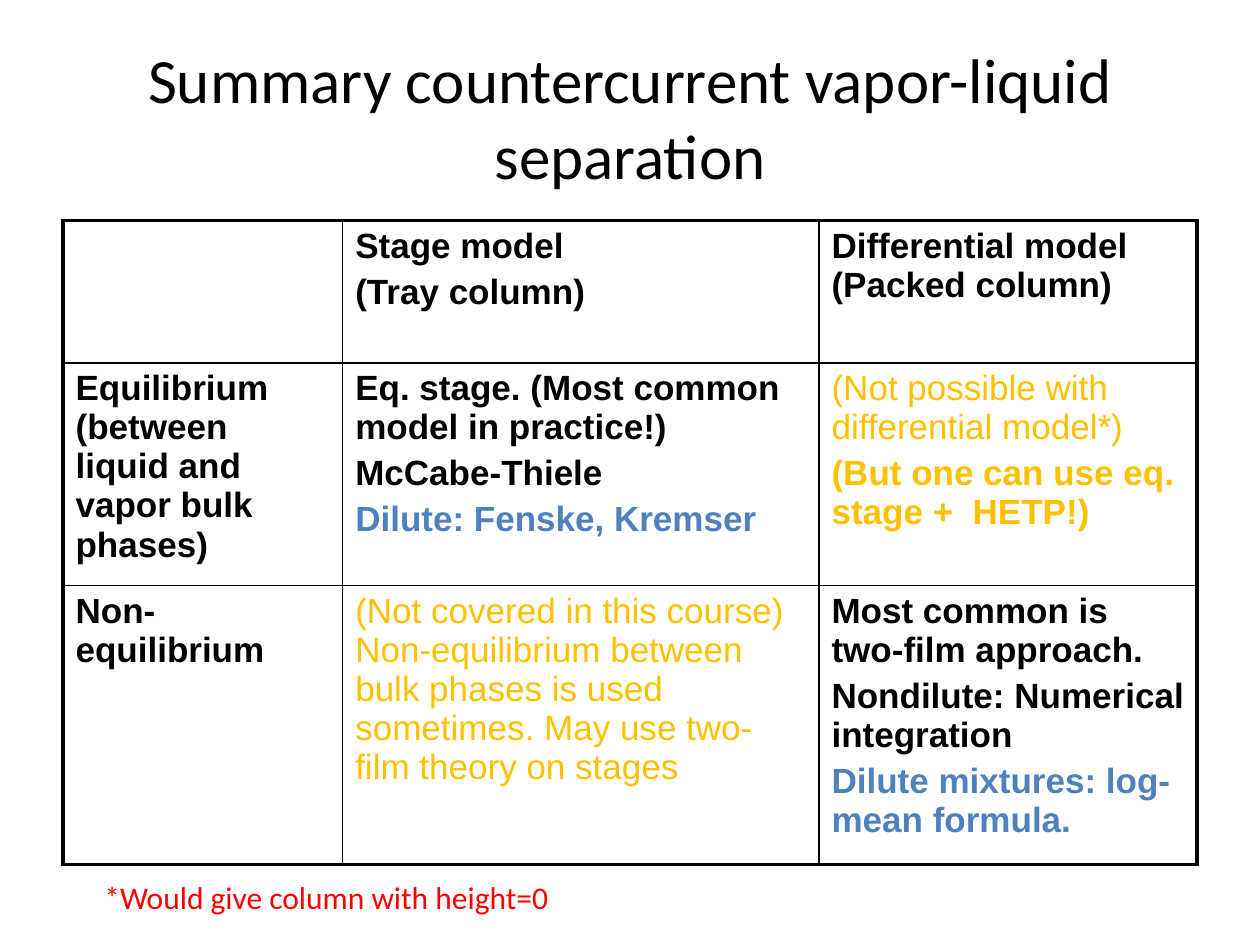
import pptx
import pptx.util
import pptx.dml.color
import pptx.enum.text
import pptx.oxml
import pptx.oxml.ns

Inches = pptx.util.Inches
Pt = pptx.util.Pt
COLORS = {"black": "000000", "blue": "4F81BD", "gold": "FFC000", "red": "FF0000"}


def add_run(p, text, size, font, color, bold=False):
    r = p.add_run()
    r.text = text
    r.font.size = Pt(size)
    r.font.name = font
    r.font.bold = bold
    r.font.color.rgb = pptx.dml.color.RGBColor.from_string(COLORS[color])


def add_border(cell, side, width):
    cell._tc.get_or_add_tcPr().append(pptx.oxml.parse_xml(
        f'<a:{side} {pptx.oxml.ns.nsdecls("a")} w="{Pt(width)}">'
        f'<a:solidFill><a:srgbClr val="{COLORS["black"]}"/></a:solidFill></a:{side}>'))


prs = pptx.Presentation()
prs.slide_width = Inches(10)
prs.slide_height = Inches(7.5)
s = prs.slides.add_slide(prs.slide_layouts[6])

title = s.shapes.add_textbox(Inches(0.5), Inches(0.3), Inches(9), Inches(1.25))
tf = title.text_frame
tf.word_wrap = True
tf.vertical_anchor = pptx.enum.text.MSO_ANCHOR.MIDDLE
p = tf.paragraphs[0]
p.alignment = pptx.enum.text.PP_ALIGN.CENTER
add_run(p, "Summary countercurrent vapor-liquid separation", 36, "Calibri", "black")

rows = [
    [
        [],
        [("Stage model", "black", True), ("(Tray column)", "black", True)],
        [("Differential model (Packed column)", "black", True)],
    ],
    [
        [("Equilibrium (between liquid and vapor bulk phases)", "black", True)],
        [("Eq. stage. (Most common model in practice!)", "black", True),
         ("McCabe-Thiele", "black", True),
         ("Dilute: Fenske, Kremser", "blue", True)],
        [("(Not possible with differential model*)", "gold", False),
         ("(But one can use eq. stage +  HETP!)", "gold", True)],
    ],
    [
        [("Non-equilibrium", "black", True)],
        [("(Not covered in this course) Non-equilibrium between bulk phases is used "
          "sometimes. May use two-film theory on stages", "gold", False)],
        [("Most common is two-film approach.", "black", True),
         ("Nondilute: Numerical integration", "black", True),
         ("Dilute mixtures: log-mean formula.", "blue", True)],
    ],
]
col_widths = [2.22, 3.78, 3]
row_heights = [1.13, 1.65, 1.65]

table = s.shapes.add_table(3, 3, Inches(0.5), Inches(1.75), Inches(9),
                           Inches(sum(row_heights))).table
table.first_row = False
table.horz_banding = False
for col, width in zip(table.columns, col_widths):
    col.width = Inches(width)
for row, height in zip(table.rows, row_heights):
    row.height = Inches(height)

for i, row in enumerate(rows):
    for j, paragraphs in enumerate(row):
        cell = table.cell(i, j)
        tf = cell.text_frame
        for k, (text, color, bold) in enumerate(paragraphs):
            p = tf.add_paragraph() if k else tf.paragraphs[0]
            p.space_before = Pt(4)
            add_run(p, text, 20, "Arial", color, bold)
        outer = {"lnL": j == 0, "lnR": j == 2, "lnT": i == 0, "lnB": i == 2}
        for side, is_outer in outer.items():
            add_border(cell, side, 2.25 if is_outer else 1)
        cell.fill.background()

note = s.shapes.add_textbox(Inches(0.73), Inches(6.92), Inches(3.77), Inches(0.4))
tf = note.text_frame
tf.word_wrap = False
tf.auto_size = pptx.enum.text.MSO_AUTO_SIZE.SHAPE_TO_FIT_TEXT
add_run(tf.paragraphs[0], "*Would give column with height=0", 18, "Calibri", "red")

prs.save("out.pptx")
